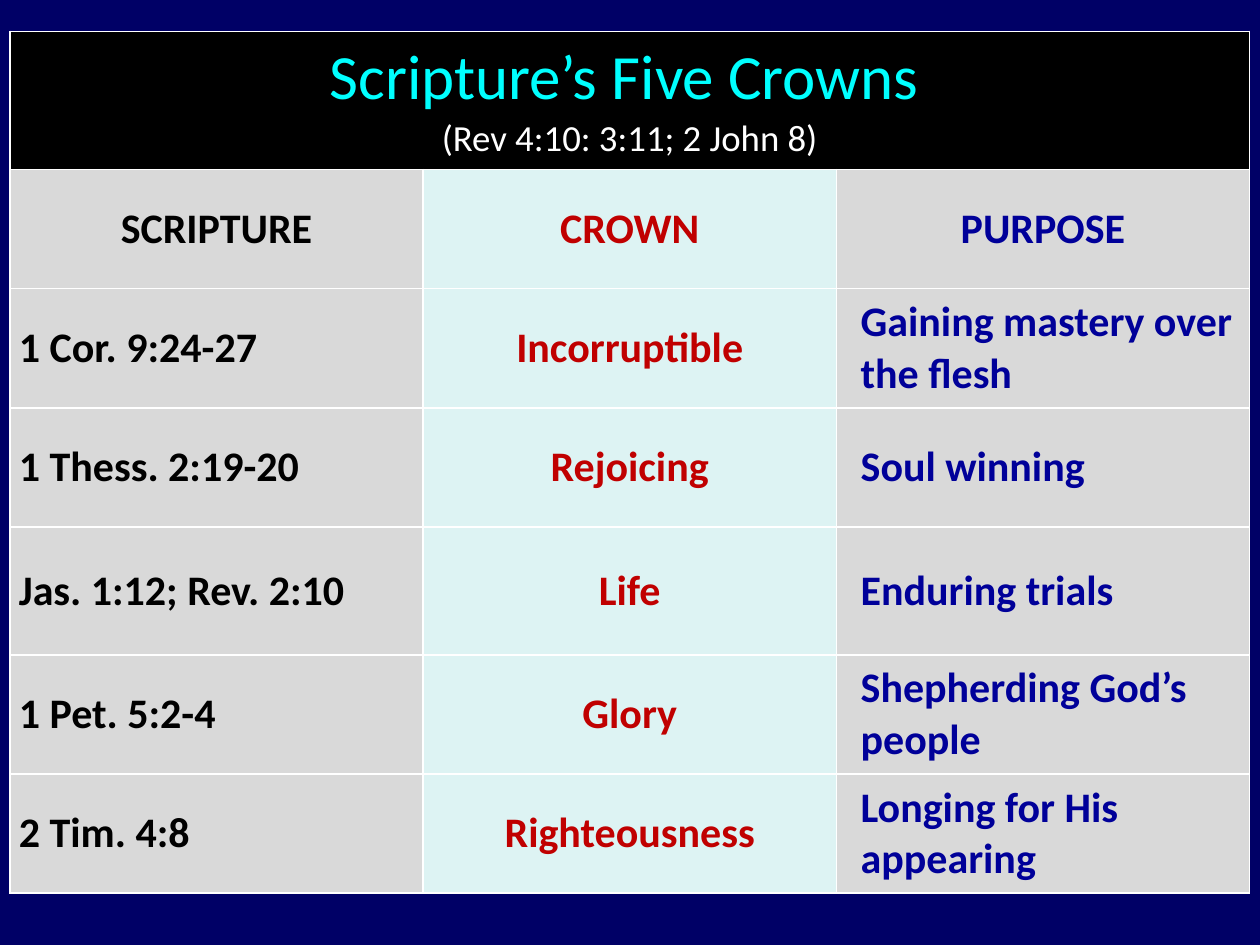
import pptx
import pptx.dml.color
import pptx.enum.text
import pptx.oxml
import pptx.oxml.ns
import pptx.util

Cm, Pt = pptx.util.Cm, pptx.util.Pt
RGB = pptx.dml.color.RGBColor.from_string
LEFT, CENTER = pptx.enum.text.PP_ALIGN.LEFT, pptx.enum.text.PP_ALIGN.CENTER

COLORS = {
    "background": "000066", "banner": "000000", "title": "00FFFF", "white": "FFFFFF",
    "gray": "D9D9D9", "aqua": "DDF3F3",
    "scripture": "000000", "crown": "C00000", "purpose": "000099",
}


def add_text(p, text, size=24, color="white", bold=False):
    r = p.add_run()
    r.text = text
    r.font.name = "Calibri"
    r.font.size = Pt(size)
    r.font.bold = bold
    r.font.color.rgb = RGB(COLORS[color])


def style_cell(cell, fill):
    """Set margins, anchor, white borders and fill; borders must precede the fill."""
    cell.margin_left = cell.margin_right = Cm(0.18)
    cell.margin_top = cell.margin_bottom = Cm(0.1)
    cell.vertical_anchor = pptx.enum.text.MSO_ANCHOR.MIDDLE
    tcPr = cell._tc.get_or_add_tcPr()
    for side in ("lnL", "lnR", "lnT", "lnB"):
        tcPr.append(pptx.oxml.parse_xml(
            f'<a:{side} {pptx.oxml.ns.nsdecls("a")} w="{Pt(1)}"><a:solidFill>'
            f'<a:srgbClr val="{COLORS["white"]}"/></a:solidFill></a:{side}>'))
    cell.fill.solid()
    cell.fill.fore_color.rgb = RGB(COLORS[fill])


prs = pptx.Presentation()
prs.slide_width, prs.slide_height = Cm(25.4), Cm(19.05)
s = prs.slides.add_slide(prs.slide_layouts[6])
s.background.fill.solid()
s.background.fill.fore_color.rgb = RGB(COLORS["background"])

crowns = [
    ("SCRIPTURE", "CROWN", "PURPOSE"),
    ("1 Cor. 9:24-27", "Incorruptible", "Gaining mastery over the flesh"),
    ("1 Thess. 2:19-20", "Rejoicing", "Soul winning"),
    ("Jas. 1:12; Rev. 2:10", "Life", "Enduring trials"),
    ("1 Pet. 5:2-4", "Glory", "Shepherding God’s people"),
    ("2 Tim. 4:8", "Righteousness", "Longing for His appearing"),
]
# text color, fill, alignment, left indent below the header row
columns = [
    ("scripture", "gray", LEFT, 0),
    ("crown", "aqua", CENTER, 0),
    ("purpose", "gray", LEFT, Cm(0.31)),
]
heights = [2.79, 2.4, 2.4, 2.4, 2.58, 2.4, 2.4]

table = s.shapes.add_table(len(heights), len(columns), Cm(0.2), Cm(0.63),
                           Cm(25), Cm(sum(heights))).table
for row, height in zip(table.rows, heights):
    row.height = Cm(height)
for col in table.columns:
    col.width = Cm(8.33)

for cell in table.rows[0].cells:
    style_cell(cell, "banner")
banner = table.cell(0, 0)
banner.merge(table.cell(0, 2))
p = banner.text_frame.paragraphs[0]
p.alignment = CENTER
add_text(p, "Scripture’s Five Crowns", size=36, color="title")
add_text(p, " ", size=27)
p.add_line_break()
add_text(p, "(Rev 4:10: 3:11; 2 John 8)", size=21)

for i, texts in enumerate(crowns, start=1):
    for j, (text, (color, fill, align, indent)) in enumerate(zip(texts, columns)):
        cell = table.cell(i, j)
        style_cell(cell, fill)
        p = cell.text_frame.paragraphs[0]
        p.alignment = CENTER if i == 1 else align
        if i > 1 and indent:
            p._p.get_or_add_pPr().set("marL", str(indent))
        add_text(p, text, color=color, bold=True)

prs.save("out.pptx")
